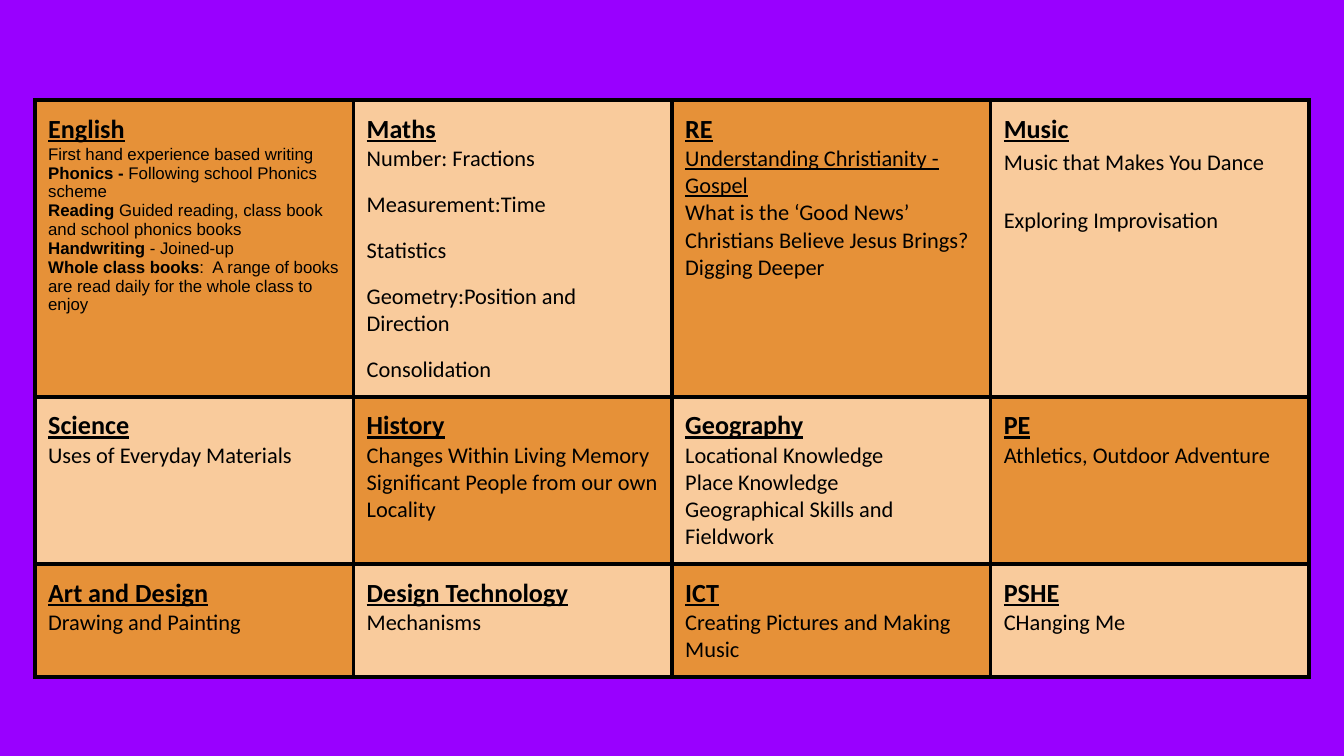
from dataclasses import dataclass

import pptx
import pptx.dml.color
import pptx.oxml
import pptx.oxml.ns
import pptx.util
from pptx.util import Cm, Pt

PURPLE, ORANGE, PEACH, BLACK = "9900FF", "E69138", "F9CB9C", "000000"
COLUMN_WIDTH = Cm(6.02)
ROW_HEIGHTS = [Cm(3.43), Cm(2.11), Cm(2.11)]
INSET = Cm(0.25)
BORDER = Pt(2.25)


@dataclass
class Line:
    """One paragraph: an optional bold lead followed by plain text."""
    text: str
    lead: str = ""
    size: float = 12
    font: str = "Calibri"
    underline: bool = False
    before: float = 0
    after: float = 0
    spacing: float = 1.0


@dataclass
class Subject:
    name: str
    lines: list[Line]


def small(text: str, lead: str = "") -> Line:
    return Line(text, lead, size=9, font="Arial")


def subject(name: str, *texts: str) -> Subject:
    return Subject(name, [Line(text) for text in texts])


SUBJECTS = [
    [
        Subject("English", [
            small("First hand experience based writing"),
            small(" Following school Phonics scheme", "Phonics -"),
            small("Guided reading, class book and school phonics books", "Reading "),
            small(" - Joined-up", "Handwriting"),
            small(":  A range of books are read daily for the whole class to enjoy",
                  "Whole class books"),
        ]),
        Subject("Maths", [
            Line("Number: Fractions"),
            Line("Measurement:Time", before=10),
            Line("Statistics", before=10),
            Line("Geometry:Position and Direction", before=10),
            Line("Consolidation", before=10, after=10),
        ]),
        Subject("RE", [
            Line("Understanding Christianity - Gospel", underline=True),
            Line("What is the ‘Good News’ Christians Believe Jesus Brings?"),
            Line("Digging Deeper"),
        ]),
        Subject("Music", [
            Line("Music that Makes You Dance", spacing=1.15),
            Line("Exploring Improvisation", before=14.6, spacing=1.15),
        ]),
    ],
    [
        subject("Science", "Uses of Everyday Materials"),
        subject("History", "Changes Within Living Memory",
                "Significant People from our own Locality"),
        subject("Geography", "Locational Knowledge", "Place Knowledge",
                "Geographical Skills and Fieldwork"),
        subject("PE", "Athletics, Outdoor Adventure"),
    ],
    [
        subject("Art and Design", "Drawing and Painting"),
        subject("Design Technology", "Mechanisms"),
        subject("ICT", "Creating Pictures and Making Music"),
        subject("PSHE", "CHanging Me"),
    ],
]


def color(value: str) -> pptx.dml.color.RGBColor:
    return pptx.dml.color.RGBColor.from_string(value)


def paint(fill, value: str) -> None:
    fill.solid()
    fill.fore_color.rgb = color(value)


def add_borders(cell) -> None:
    properties = cell._tc.get_or_add_tcPr()
    for side in ("lnL", "lnR", "lnT", "lnB"):
        properties.append(pptx.oxml.parse_xml(
            f'<a:{side} {pptx.oxml.ns.nsdecls("a")} w="{BORDER}">'
            f'<a:solidFill><a:srgbClr val="{BLACK}"/></a:solidFill>'
            f'<a:prstDash val="solid"/></a:{side}>'))


def write_line(para, line: Line) -> None:
    para.font.name = line.font
    para.font.size = Pt(line.size)
    para.font.underline = line.underline
    para.font.color.rgb = color(BLACK)
    para.space_before = Pt(line.before)
    para.space_after = Pt(line.after)
    para.line_spacing = line.spacing
    for text, bold in ((line.lead, True), (line.text, False)):
        if text:
            span = para.add_run()
            span.text = text
            span.font.bold = bold


def fill_cell(cell, item: Subject, background: str) -> None:
    cell.margin_left = cell.margin_right = INSET
    cell.margin_top = cell.margin_bottom = INSET
    add_borders(cell)
    paint(cell.fill, background)
    frame = cell.text_frame
    write_line(frame.paragraphs[0], Line("", item.name, size=14, underline=True))
    for line in item.lines:
        write_line(frame.add_paragraph(), line)


def main() -> None:
    deck = pptx.Presentation()
    deck.slide_width, deck.slide_height = Cm(25.4), Cm(14.29)
    page = deck.slides.add_slide(deck.slide_layouts[6])
    paint(page.background.fill, PURPLE)

    # Curriculum grid
    columns = len(SUBJECTS[0])
    table = page.shapes.add_table(
        len(SUBJECTS), columns, Cm(0.66), Cm(1.89),
        COLUMN_WIDTH * columns, sum(ROW_HEIGHTS)).table
    table.first_row = table.horz_banding = False
    for column in table.columns:
        column.width = COLUMN_WIDTH
    for row, height in zip(table.rows, ROW_HEIGHTS):
        row.height = height

    # Subjects on a checkerboard of two colours
    for r, items in enumerate(SUBJECTS):
        for c, item in enumerate(items):
            fill_cell(table.cell(r, c), item, PEACH if (r + c) % 2 else ORANGE)

    deck.save("out.pptx")


if __name__ == "__main__":
    main()
